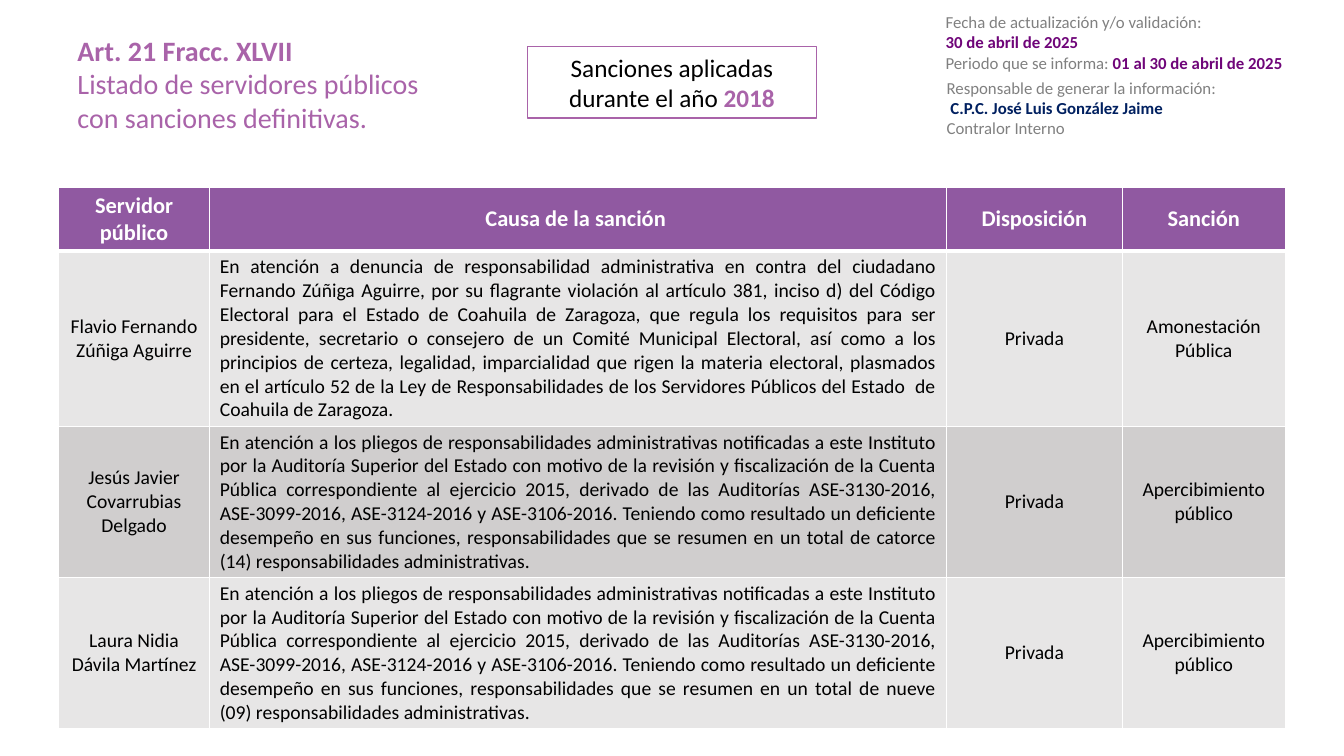
from lxml import etree
from pptx import Presentation
from pptx.dml.color import RGBColor
from pptx.enum.shapes import MSO_SHAPE
from pptx.enum.text import MSO_ANCHOR, PP_ALIGN
from pptx.oxml.ns import qn
from pptx.util import Inches, Pt

FONT = "Calibri"
WHITE, BLACK, GRAY, NAVY = "FFFFFF", "000000", "808080", "002060"
LILAC, PURPLE, HEADER_FILL = "A963A9", "6F0579", "9059A1"
BAND_FILLS = ["E7E6E6", "D0CECE"]

# Each paragraph is a list of runs: (text, colour, bold)
TITLE = [
    [("Art. 21 Fracc. XLVII", LILAC, True)],
    [("Listado de servidores públicos con sanciones definitivas.", LILAC, False)],
]
YEAR = [[("Sanciones aplicadas durante el año ", BLACK, False), ("2018", LILAC, True)]]
DATES = [
    [("Fecha de actualización y/o validación:", GRAY, False)],
    [("30 de abril de 2025", PURPLE, True)],
    [("Periodo que se informa: ", GRAY, False), ("01 al 30 de abril de 2025", PURPLE, True)],
]
RESPONSIBLE = [
    [("Responsable de generar la información:", GRAY, False)],
    [(" ", GRAY, False), ("C.P.C. José Luis González Jaime", NAVY, True)],
    [("Contralor Interno", GRAY, False)],
]

AUDIT_CAUSE = (
    "En atención a los pliegos de responsabilidades administrativas notificadas a este "
    "Instituto por la Auditoría Superior del Estado con motivo de la revisión y fiscalización "
    "de la Cuenta Pública correspondiente al ejercicio 2015, derivado de las Auditorías "
    "ASE-3130-2016, ASE-3099-2016, ASE-3124-2016 y ASE-3106-2016. Teniendo como resultado un "
    "deficiente desempeño en sus funciones, responsabilidades que se resumen en un total de "
    "{} responsabilidades administrativas."
)
ELECTORAL_CAUSE = (
    "En atención a denuncia de responsabilidad administrativa en contra del ciudadano Fernando "
    "Zúñiga Aguirre, por su flagrante violación al artículo 381, inciso d) del Código Electoral "
    "para el Estado de Coahuila de Zaragoza, que regula los requisitos para ser presidente, "
    "secretario o consejero de un Comité Municipal Electoral, así como a los principios de "
    "certeza, legalidad, imparcialidad que rigen la materia electoral, plasmados en el artículo "
    "52 de la Ley de Responsabilidades de los Servidores Públicos del Estado  de Coahuila de "
    "Zaragoza."
)
ROWS = [
    ("Servidor público", "Causa de la sanción ", "Disposición", "Sanción"),
    ("Flavio Fernando Zúñiga Aguirre", ELECTORAL_CAUSE, "Privada", "Amonestación Pública"),
    ("Jesús Javier Covarrubias Delgado", AUDIT_CAUSE.format("catorce (14)"), "Privada",
     "Apercibimiento público"),
    ("Laura Nidia Dávila Martínez", AUDIT_CAUSE.format("nueve (09)"), "Privada",
     "Apercibimiento público"),
]
COLUMN_WIDTHS = [1.5, 7.31, 1.74, 1.62]
ROW_HEIGHTS = [0.63, 1.74, 1.5, 1.5]
CAUSE_COLUMN = 1


def color(value):
    return RGBColor.from_string(value)


def write(frame, paragraphs, size, align=PP_ALIGN.LEFT, wrap=True):
    frame.word_wrap = wrap
    for index, runs in enumerate(paragraphs):
        paragraph = frame.paragraphs[0] if index == 0 else frame.add_paragraph()
        paragraph.alignment = align
        paragraph.font.name = FONT
        paragraph.font.size = Pt(size)
        for text, run_color, bold in runs:
            run = paragraph.add_run()
            run.text = text
            run.font.name = FONT
            run.font.size = Pt(size)
            run.font.bold = bold
            run.font.color.rgb = color(run_color)


def add_text(slide, box, paragraphs, size, wrap=True):
    shape = slide.shapes.add_textbox(*map(Inches, box))
    write(shape.text_frame, paragraphs, size, wrap=wrap)


def set_borders(cell, bottom_width):
    properties = cell._tc.get_or_add_tcPr()
    for index, (side, width) in enumerate(
        [("lnL", 1), ("lnR", 1), ("lnT", 1), ("lnB", bottom_width)]
    ):
        line = etree.Element(qn(f"a:{side}"), w=str(Pt(width)))
        fill = etree.SubElement(line, qn("a:solidFill"))
        etree.SubElement(fill, qn("a:srgbClr"), val=WHITE)
        properties.insert(index, line)


def add_sanctions_table(slide):
    size = (sum(COLUMN_WIDTHS), sum(ROW_HEIGHTS))
    table = slide.shapes.add_table(
        len(ROWS), len(COLUMN_WIDTHS), *map(Inches, (0.58, 1.86, *size))
    ).table
    for column, width in zip(table.columns, COLUMN_WIDTHS):
        column.width = Inches(width)
    for row_index, (row, height, texts) in enumerate(zip(table.rows, ROW_HEIGHTS, ROWS)):
        row.height = Inches(height)
        header = row_index == 0
        row_fill = HEADER_FILL if header else BAND_FILLS[(row_index - 1) % 2]
        for column_index, (cell, text) in enumerate(zip(row.cells, texts)):
            justified = column_index == CAUSE_COLUMN and not header
            cell.fill.solid()
            cell.fill.fore_color.rgb = color(row_fill)
            cell.vertical_anchor = MSO_ANCHOR.MIDDLE
            cell.margin_top = cell.margin_bottom = Inches(0.03)
            write(cell.text_frame, [[(text, WHITE if header else BLACK, header)]],
                  16 if header else 14,
                  PP_ALIGN.JUSTIFY if justified else PP_ALIGN.CENTER)
            set_borders(cell, 3 if header else 1)


def add_year_box(slide):
    shape = slide.shapes.add_shape(
        MSO_SHAPE.RECTANGLE, *map(Inches, (5.23, 0.46, 2.87, 0.71))
    )
    shape.shadow.inherit = False
    shape.fill.solid()
    shape.fill.fore_color.rgb = color(WHITE)
    shape.line.color.rgb = color(LILAC)
    shape.line.width = Pt(1)
    write(shape.text_frame, YEAR, 18, PP_ALIGN.CENTER)


def main():
    presentation = Presentation()
    presentation.slide_width = Inches(13.33)
    presentation.slide_height = Inches(7.5)
    slide = presentation.slides.add_slide(presentation.slide_layouts[6])
    add_text(slide, (0.67, 0.28, 3.85, 1.45), TITLE, 20)
    add_sanctions_table(slide)
    add_year_box(slide)
    add_text(slide, (9.28, 0.07, 3.59, 0.71), DATES, 12, wrap=False)
    add_text(slide, (9.29, 0.72, 3.11, 1.54), RESPONSIBLE, 12)
    presentation.save("out.pptx")


if __name__ == "__main__":
    main()
